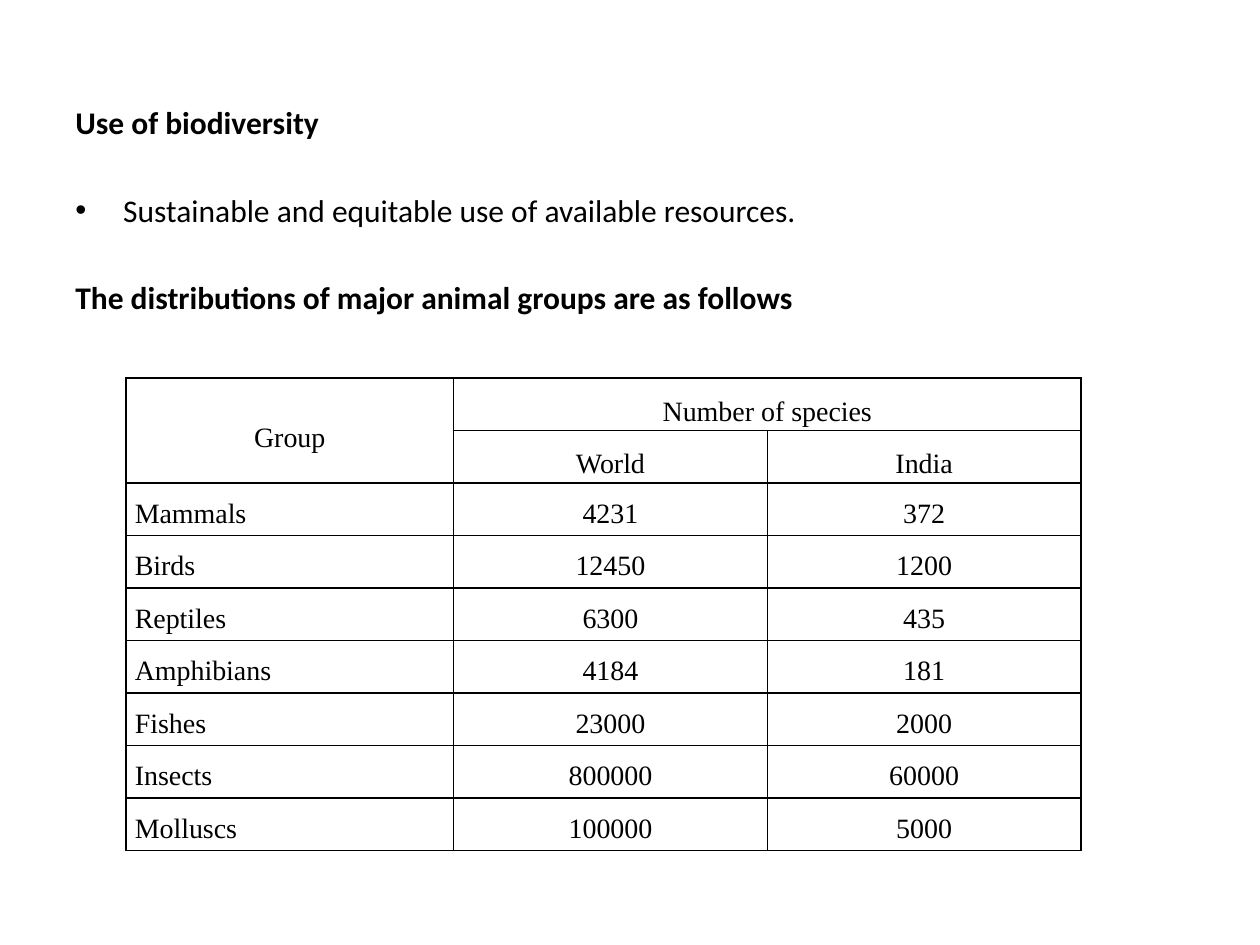
from lxml import etree
from pptx import Presentation
from pptx.dml.color import RGBColor
from pptx.enum.text import MSO_ANCHOR, PP_ALIGN
from pptx.oxml.ns import qn
from pptx.util import Inches, Pt

LEFT, CENTER = PP_ALIGN.LEFT, PP_ALIGN.CENTER
TOP, MIDDLE = MSO_ANCHOR.TOP, MSO_ANCHOR.MIDDLE

# Content: (text, is a bullet)
LINES = [
    ("Use of biodiversity", False),
    ("Sustainable and equitable use of available resources.", True),
    ("The distributions of major animal groups are as follows", False),
]
HEADER = [
    ("Group", "Number of species", ""),
    ("", "World", "India"),
]
SPECIES = [
    ("Mammals", 4231, 372),
    ("Birds", 12450, 1200),
    ("Reptiles", 6300, 435),
    ("Amphibians", 4184, 181),
    ("Fishes", 23000, 2000),
    ("Insects", 800000, 60000),
    ("Molluscs", 100000, 5000),
]
COLUMN_WIDTHS = [2.6, 2.49, 2.49]
TABLE_HEIGHT = 3.75

THEME = {
    "ink": RGBColor(0, 0, 0),
    "body": ("Calibri", Pt(18)),
    "table": ("Times New Roman", Pt(16)),
    "border": Pt(1),
    "gap": Pt(28.3),
    "indent": Inches(0.38),
}


def style(para, role, bold=False):
    font = para.runs[0].font
    font.name, font.size = THEME[role]
    font.bold = bold
    font.color.rgb = THEME["ink"]


def hang(para, bullet):
    properties = para._p.get_or_add_pPr()
    properties.set("marL", str(THEME["indent"]))
    properties.set("indent", str(-THEME["indent"]))
    if bullet:
        etree.SubElement(properties, qn("a:buFont"), typeface="Arial")
        etree.SubElement(properties, qn("a:buChar"), char="•")
    else:
        etree.SubElement(properties, qn("a:buNone"))


def add_borders(cell):
    properties = cell._tc.get_or_add_tcPr()
    for position, side in enumerate(("a:lnL", "a:lnR", "a:lnT", "a:lnB")):
        line = etree.Element(qn(side), w=str(THEME["border"]))
        fill = etree.SubElement(line, qn("a:solidFill"))
        etree.SubElement(fill, qn("a:srgbClr"), val=str(THEME["ink"]))
        properties.insert(position, line)


def add_body(page):
    box = page.shapes.add_textbox(Inches(0.5), Inches(0.42), Inches(9), Inches(6.28))
    frame = box.text_frame
    frame.word_wrap = True
    frame.margin_top = Inches(0.4)
    for index, (text, bullet) in enumerate(LINES):
        para = frame.add_paragraph() if index else frame.paragraphs[0]
        para.text = text
        if index:
            para.space_before = THEME["gap"]
        hang(para, bullet)
        style(para, "body", bold=not bullet)


def add_species_table(page):
    rows = HEADER + SPECIES
    table = page.shapes.add_table(
        len(rows), len(COLUMN_WIDTHS), Inches(1), Inches(3),
        Inches(sum(COLUMN_WIDTHS)), Inches(TABLE_HEIGHT)).table
    table.first_row = table.horz_banding = False
    for column, width in zip(table.columns, COLUMN_WIDTHS):
        column.width = Inches(width)
    for row in table.rows:
        row.height = Inches(TABLE_HEIGHT / len(rows))

    for r, values in enumerate(rows):
        is_header = r < len(HEADER)
        for c, value in enumerate(values):
            cell = table.cell(r, c)
            cell.fill.background()
            add_borders(cell)
            cell.margin_left = cell.margin_right = Inches(0.07)
            cell.margin_top = cell.margin_bottom = 0
            cell.vertical_anchor = MIDDLE if is_header else TOP
            if value == "":
                continue
            para = cell.text_frame.paragraphs[0]
            para.text = str(value)
            para.alignment = CENTER if is_header or c else LEFT
            para.line_spacing = 1.5
            style(para, "table")

    # Header spans
    table.cell(0, 0).merge(table.cell(1, 0))
    table.cell(0, 1).merge(table.cell(0, 2))


def main():
    deck = Presentation()
    deck.slide_width, deck.slide_height = Inches(10), Inches(7.5)
    page = deck.slides.add_slide(deck.slide_layouts[6])
    add_body(page)
    add_species_table(page)
    deck.save("out.pptx")


if __name__ == "__main__":
    main()
